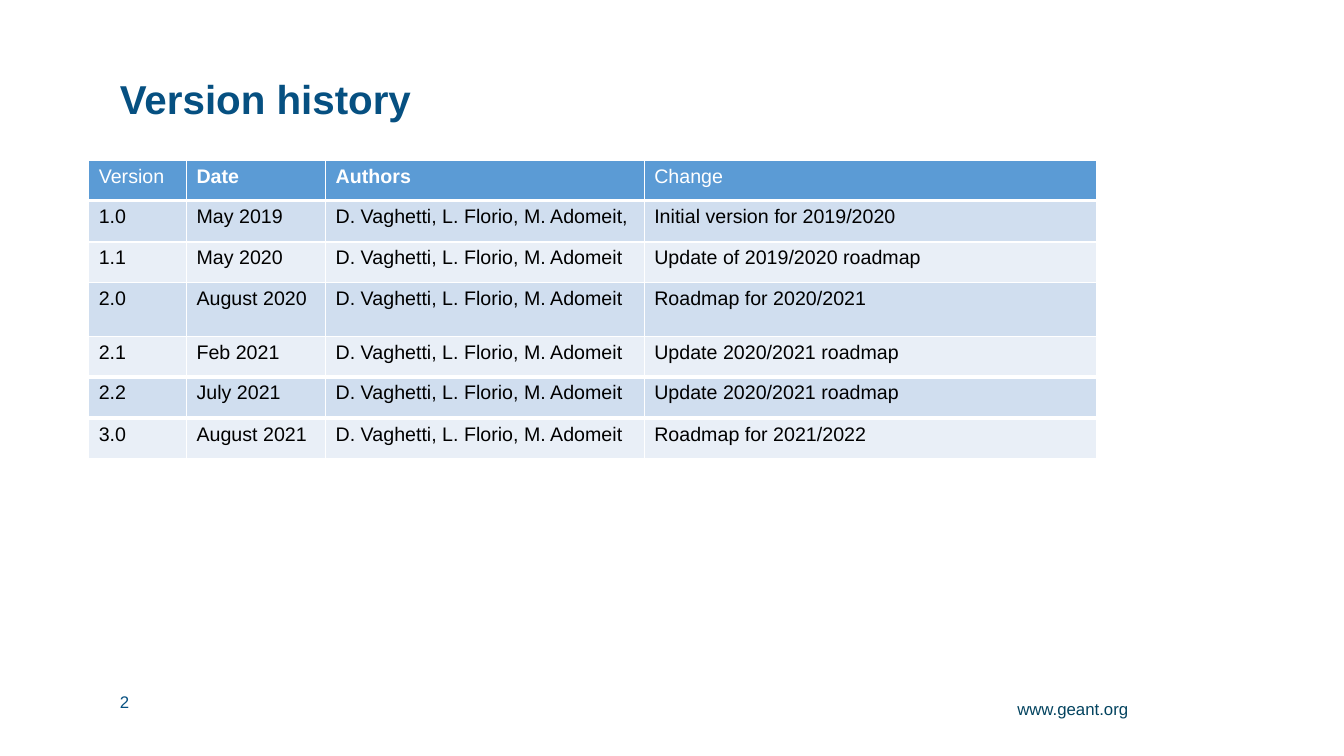
from lxml import etree
from pptx import Presentation
from pptx import util as u
from pptx.dml.color import RGBColor
from pptx.enum import text
from pptx.oxml.ns import qn

COLORS = {
    "title": "065081",
    "site": "03435F",
    "header": "5B9BD5",
    "odd": "D0DEEF",
    "even": "E9EFF7",
    "white": "FFFFFF",
    "black": "000000",
}
TEAM = "D. Vaghetti, L. Florio, M. Adomeit"
HEADINGS = ["Version", "Date", "Authors", "Change"]
BOLD_HEADINGS = {"Date", "Authors"}
VERSIONS = [
    ["1.0", "May 2019", TEAM + ",", "Initial version for 2019/2020"],
    ["1.1", "May 2020", TEAM, "Update of 2019/2020 roadmap"],
    ["2.0", "August 2020", TEAM, "Roadmap for 2020/2021"],
    ["2.1", "Feb 2021", TEAM, "Update 2020/2021 roadmap"],
    ["2.2", "July 2021", TEAM, "Update 2020/2021 roadmap"],
    ["3.0", "August 2021", TEAM, "Roadmap for 2021/2022"],
]
COL_WIDTHS = [0.97, 1.38, 3.16, 4.49]
ROW_HEIGHTS = [0.4, 0.41, 0.4, 0.54, 0.4, 0.41, 0.4]
THICK_BELOW = {0, 4, 5}  # rows followed by a heavy rule


class SlideBuilder:
    def __init__(self, slide, font="Arial"):
        self.slide = slide
        self.font = font

    def style(self, p, size, color, bold=False):
        p.font.name = self.font
        p.font.size = u.Pt(size)
        p.font.bold = bold
        p.font.color.rgb = RGBColor.from_string(COLORS[color])

    def text(self, words, box, size, color, bold=False, align=None,
             anchor=text.MSO_ANCHOR.TOP, spacing=None):
        sp = self.slide.shapes.add_textbox(*map(u.Inches, box))
        tf = sp.text_frame
        tf.word_wrap = True
        tf.vertical_anchor = anchor
        p = tf.paragraphs[0]
        p.text = words
        p.alignment = align
        p.line_spacing = spacing
        self.style(p, size, color, bold)

    def border(self, cell, side, width):
        tc_pr = cell._tc.get_or_add_tcPr()
        ln = etree.SubElement(tc_pr, qn(f"a:ln{side}"), w=str(u.Pt(width)))
        fill = etree.SubElement(ln, qn("a:solidFill"))
        etree.SubElement(fill, qn("a:srgbClr"), val=COLORS["white"])

    def table(self, rows, left, top, widths, heights):
        frame = self.slide.shapes.add_table(
            len(rows), len(widths), u.Inches(left), u.Inches(top),
            u.Inches(sum(widths)), u.Inches(sum(heights)))
        table = frame.table
        table.horz_banding = False
        for col, width in zip(table.columns, widths):
            col.width = u.Inches(width)
        for i, (row, height) in enumerate(zip(table.rows, heights)):
            row.height = u.Inches(height)
            fill = "header" if i == 0 else ("odd" if i % 2 else "even")
            rules = {"L": 1, "R": 1,
                     "T": 3 if i - 1 in THICK_BELOW else 1,
                     "B": 3 if i in THICK_BELOW else 1}
            for cell, words in zip(row.cells, rows[i]):
                for side, width in rules.items():
                    self.border(cell, side, width)
                cell.fill.solid()
                cell.fill.fore_color.rgb = RGBColor.from_string(COLORS[fill])
                p = cell.text_frame.paragraphs[0]
                p.text = words
                self.style(p, 14, "black" if i else "white",
                           words in BOLD_HEADINGS)


def main():
    prs = Presentation()
    prs.slide_width, prs.slide_height = u.Inches(13.33), u.Inches(7.5)
    s = SlideBuilder(prs.slides.add_slide(prs.slide_layouts[6]))

    # Footer
    s.text("2", (1.09, 6.81, 1.45, 0.3), 12, "title")
    s.text("www.geant.org", (9.61, 6.91, 1.68, 0.37), 12, "site",
           align=text.PP_ALIGN.RIGHT, spacing=0.9)

    # Title
    s.text("Version history", (1.09, 0.77, 10.82, 0.47), 28.8, "title",
           bold=True, anchor=text.MSO_ANCHOR.MIDDLE, spacing=0.9)

    # Version table
    s.table([HEADINGS] + VERSIONS, 0.88, 1.59, COL_WIDTHS, ROW_HEIGHTS)

    prs.save("out.pptx")


if __name__ == "__main__":
    main()
